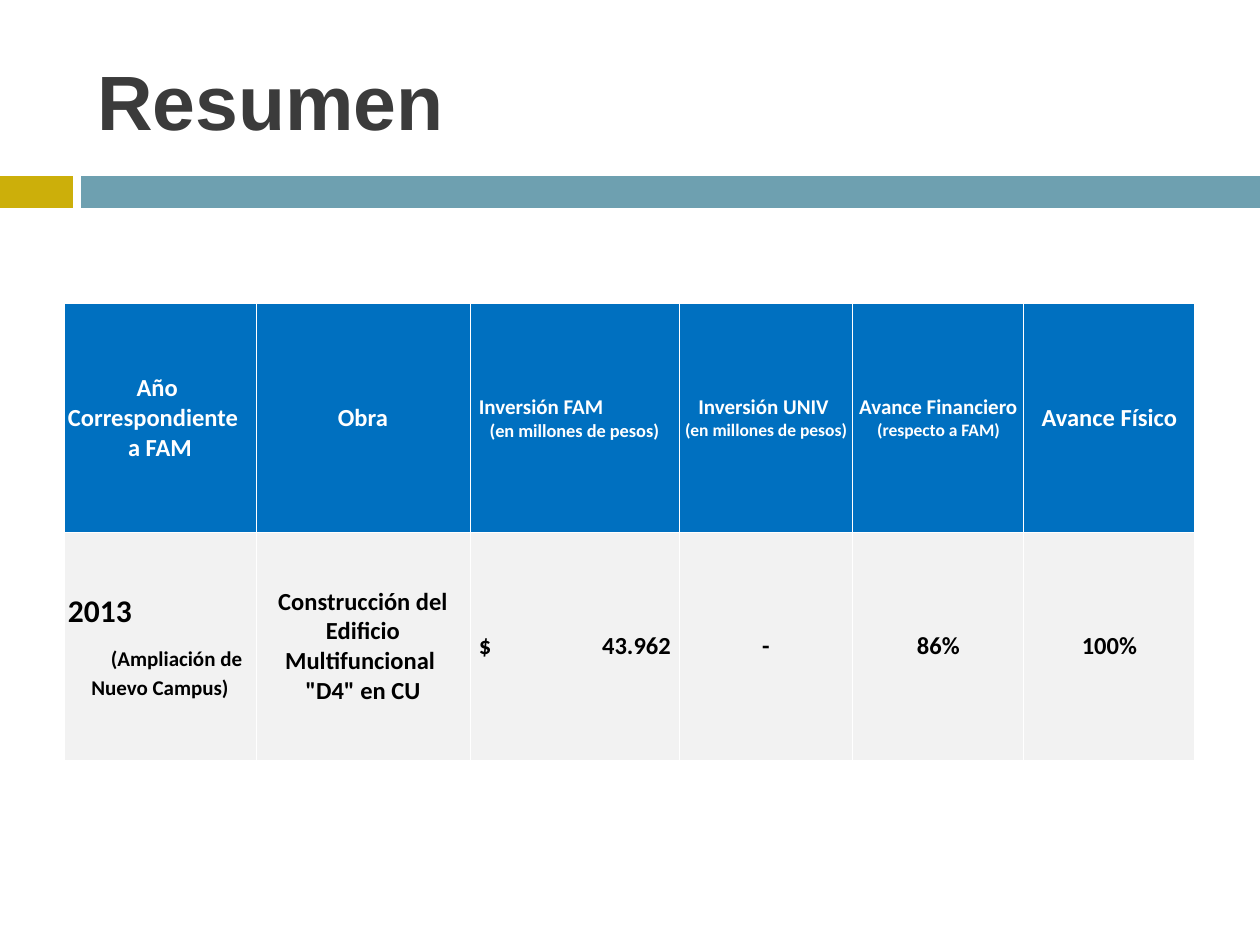
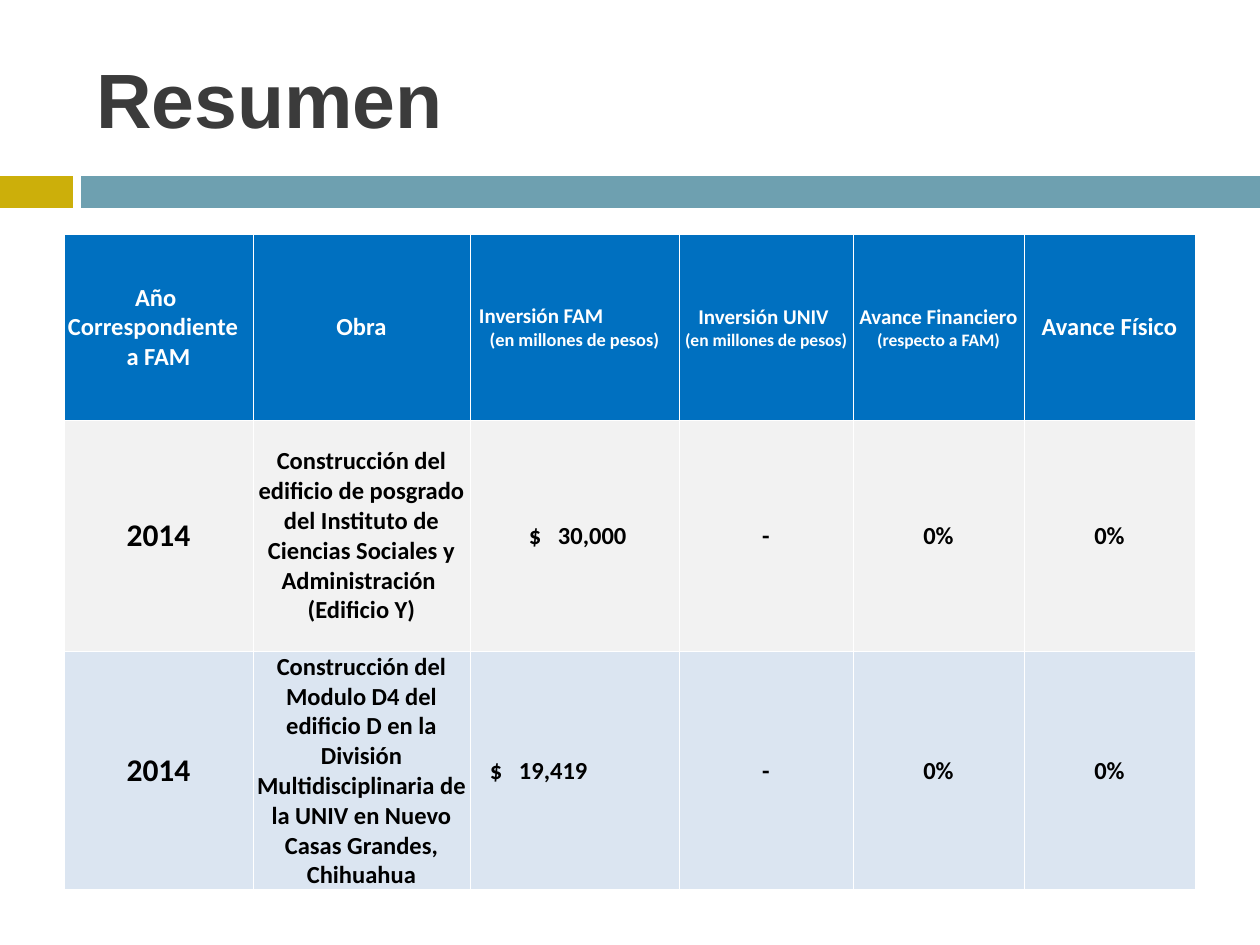
from lxml import etree
from pptx import Presentation
from pptx.dml.color import RGBColor
from pptx.enum.shapes import MSO_SHAPE as SHAPE
from pptx.enum.text import MSO_ANCHOR as ANCHOR, PP_ALIGN as ALIGN
from pptx.oxml.ns import qn
from pptx.util import Pt

WIDTH, HEIGHT = 1260, 945
GOLD, TEAL, INK = "CCAF0A", "6EA0B0", "3B3B3B"
BLUE, GREY, PALE = "0070C0", "F2F2F2", "DBE5F1"
WHITE, BLACK = "FFFFFF", "000000"
BANDS = [(0, 73, GOLD), (81, WIDTH - 81, TEAL)]
BAND_TOP, BAND_HEIGHT = 176, 32
TABLE_LEFT = 64
LAST_COLS = [209, 174, 171, 171]


def par(text, size=14, **fmt):
    return text, dict(fmt, size=size)


def amount(value, *tabs):
    return [par(f"\t$\t{value}", align=ALIGN.LEFT, tabs=tabs)]


HEADER = [
    [par("Año "), par("Correspondiente", align=ALIGN.LEFT, indent=3), par("a FAM")],
    [par("Obra")],
    [par("Inversión FAM", 12, align=ALIGN.LEFT, indent=8),
     par("(en millones de pesos)", 10.5)],
    [par("Inversión UNIV ", 12), par("(en millones de pesos)", 10)],
    [par("Avance Financiero", 12), par("(respecto a FAM)", 10)],
    [par("Avance Físico")],
]

SLIDES = [
    dict(
        title=("Resumen", 85, 32, 1124, 136),
        top=303, cols=[192, 214] + LAST_COLS, heights=[229, 228],
        rows=[
            [[par("2013", 18, align=ALIGN.LEFT, indent=3),
              par("(Ampliación de", 12, align=ALIGN.LEFT, indent=46, before=9),
              par("Nuevo Campus)", 12, before=2)],
             [par("Construcción del Edificio Multifuncional "), par('"D4" en CU')],
             amount("43.962", (8, "l"), (200, "r")),
             [par("-")], [par("86%")], [par("100%")]],
        ],
    ),
    dict(
        title=("Resumen", 84, 38, 1113, 120),
        top=234, cols=[189, 217] + LAST_COLS, heights=[186, 231, 239],
        rows=[
            [[par("2014", 18)],
             [par("Construcción del edificio de posgrado del Instituto de "
                  "Ciencias Sociales y Administración "), par("(Edificio Y)")],
             amount("30,000", (58, "l"), (87, "l")),
             [par("-")], [par("0%")], [par("0%")]],
            [[par("2014", 18)],
             [par("Construcción del Modulo D4 del edificio D en la División "
                  "Multidisciplinaria de la UNIV en Nuevo Casas Grandes, Chihuahua")],
             amount("19,419", (19, "l"), (48, "l")),
             [par("-")], [par("0%")], [par("0%")]],
        ],
    ),
]


def px(n):
    return round(n * 914400 / 126)


def rgb(color):
    return RGBColor.from_string(color)


def write(p, text, size=14, color=BLACK, font="Calibri", align=ALIGN.CENTER,
          indent=0, before=0, tabs=()):
    p.alignment = align
    p.space_before = Pt(before)
    r = p.add_run()
    r.text = text
    r.font.name, r.font.size, r.font.bold = font, Pt(size), True
    r.font.color.rgb = rgb(color)
    pPr = p._p.get_or_add_pPr()
    pPr.set("marL", str(px(indent)))
    if tabs:
        tab_list = etree.SubElement(pPr, qn("a:tabLst"))
        for pos, algn in tabs:
            etree.SubElement(tab_list, qn("a:tab"), pos=str(px(pos)), algn=algn)


def add_bands(s):
    for left, width, color in BANDS:
        sp = s.shapes.add_shape(SHAPE.RECTANGLE, px(left), px(BAND_TOP),
                                px(width), px(BAND_HEIGHT))
        sp.shadow.inherit = False
        sp.fill.solid()
        sp.fill.fore_color.rgb = rgb(color)
        sp.line.fill.background()


def add_title(s, text, *box):
    tf = s.shapes.add_textbox(*map(px, box)).text_frame
    tf.word_wrap = True
    tf.vertical_anchor = ANCHOR.MIDDLE
    write(tf.paragraphs[0], text, size=44, color=INK, font="Arial", align=ALIGN.LEFT)


def fill_cell(cell, paragraphs, fill, color):
    cell.margin_left = cell.margin_right = cell.margin_top = px(1)
    cell.margin_bottom = 0
    cell.vertical_anchor = ANCHOR.MIDDLE
    tcPr = cell._tc.get_or_add_tcPr()
    for side in ("lnL", "lnR", "lnT", "lnB"):
        ln = etree.SubElement(tcPr, qn(f"a:{side}"), w=str(Pt(0.5)))
        solid = etree.SubElement(ln, qn("a:solidFill"))
        etree.SubElement(solid, qn("a:srgbClr"), val=WHITE)
    cell.fill.solid()
    cell.fill.fore_color.rgb = rgb(fill)
    tf = cell.text_frame
    for i, (text, fmt) in enumerate(paragraphs):
        p = tf.add_paragraph() if i else tf.paragraphs[0]
        write(p, text, color=color, **fmt)


def add_summary(s, top, cols, heights, rows):
    rows = [HEADER] + rows
    table = s.shapes.add_table(len(rows), len(cols), px(TABLE_LEFT), px(top),
                               px(sum(cols)), px(sum(heights))).table
    table.horz_banding = False
    for column, width in zip(table.columns, cols):
        column.width = px(width)
    for i, (row, height) in enumerate(zip(rows, heights)):
        table.rows[i].height = px(height)
        for j, paragraphs in enumerate(row):
            fill_cell(table.cell(i, j), paragraphs, (BLUE, GREY, PALE)[i],
                      BLACK if i else WHITE)


def main():
    prs = Presentation()
    prs.slide_width, prs.slide_height = px(WIDTH), px(HEIGHT)
    for content in SLIDES:
        s = prs.slides.add_slide(prs.slide_layouts[6])
        add_bands(s)
        add_title(s, *content["title"])
        add_summary(s, content["top"], content["cols"], content["heights"],
                    content["rows"])
    prs.save("out.pptx")


if __name__ == "__main__":
    main()
